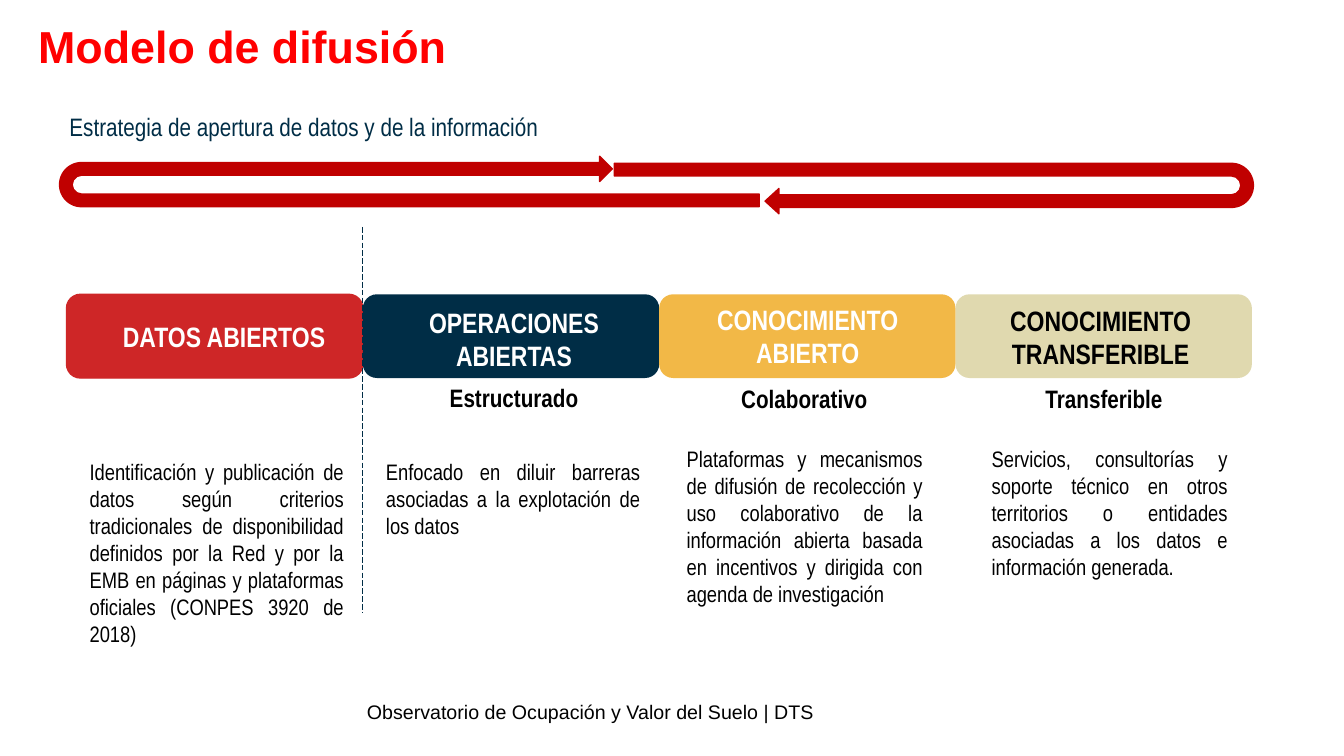
import pptx
import pptx.dml.color
import pptx.enum.dml
import pptx.enum.shapes
import pptx.enum.text
import pptx.oxml
import pptx.oxml.ns
import pptx.util

RGBColor = pptx.dml.color.RGBColor
SHAPE = pptx.enum.shapes.MSO_SHAPE
ALIGN = pptx.enum.text.PP_ALIGN

BRIGHT_RED = RGBColor(0xFF, 0x00, 0x00)
ARROW_RED = RGBColor(0xC0, 0x00, 0x00)
CARD_RED = RGBColor(0xCE, 0x26, 0x27)
NAVY = RGBColor(0x00, 0x2D, 0x46)
AMBER = RGBColor(0xF2, 0xB8, 0x47)
SAND = RGBColor(0xE0, 0xD9, 0xAF)
WHITE = RGBColor(0xFF, 0xFF, 0xFF)
BLACK = RGBColor(0x00, 0x00, 0x00)

CARD_LEFT, CARD_WIDTH = 4.95, 22.05
CARD_TOP, CARD_HEIGHT = 38.93, 11.07

STAGES = [
    {
        "fill": CARD_RED, "ink": WHITE, "border": CARD_RED,
        "heading": ("DATOS ABIERTOS", 8.4, 41.6, 5.9, ALIGN.LEFT),
        "level": None,
        "body": ("Identificación y publicación de datos según criterios tradicionales "
                 "de disponibilidad definidos por la Red y por la EMB en páginas y "
                 "plataformas oficiales (CONPES 3920 de 2018)", 5.93, 60, 20.4, 26.5),
    },
    {
        "fill": NAVY, "ink": WHITE, "border": None,
        "heading": ("OPERACIONES ABIERTAS", 29.25, 39.73, 10.3, ALIGN.CENTER),
        "level": ("Estructurado", 29.25, 49.87),
        "body": ("Enfocado en diluir barreras asociadas a la explotación de los datos",
                 27.98, 60, 20.4, 12.1),
    },
    {
        "fill": AMBER, "ink": WHITE, "border": None,
        "heading": ("CONOCIMIENTO ABIERTO", 51.1, 39.33, 10.3, ALIGN.CENTER),
        "level": ("Colaborativo", 50.85, 50),
        "body": ("Plataformas y mecanismos de difusión de recolección y uso "
                 "colaborativo de la información abierta basada en incentivos y "
                 "dirigida con agenda de investigación", 50.35, 58.27, 19.05, 22.9),
    },
    {
        "fill": SAND, "ink": BLACK, "border": None,
        "heading": ("CONOCIMIENTO TRANSFERIBLE", 72.9, 39.47, 10.3, ALIGN.CENTER),
        "level": ("Transferible", 73.15, 50),
        "body": ("Servicios, consultorías y soporte técnico en otros territorios o "
                 "entidades asociadas a los datos e información generada.",
                 73.05, 58.27, 19.05, 19.3),
    },
]


class SlideBuilder:
    """Draws styled elements on one slide, placed in percent of its width and height."""

    narrow = "Arial Narrow"
    wide = "Arial"

    def __init__(self, deck):
        self.deck = deck
        self.page = deck.slides.add_slide(deck.slide_layouts[6])

    def place(self, left, top, width, height):
        across, down = self.deck.slide_width / 100, self.deck.slide_height / 100
        return [round(length) for length in
                (left * across, top * down, width * across, height * down)]

    def text(self, words, area, size, color=BLACK, bold=False, font=None,
             align=ALIGN.LEFT, spacing=None):
        box = self.page.shapes.add_textbox(*self.place(*area))
        box.text_frame.word_wrap = True
        para = box.text_frame.paragraphs[0]
        para.alignment = align
        if spacing:
            para.line_spacing = spacing
        span = para.add_run()
        span.text = words
        span.font.name = font or self.narrow
        span.font.size = pptx.util.Pt(size)
        span.font.bold = bold
        span.font.color.rgb = color

    def paint(self, shape, fill, border=None):
        shape.shadow.inherit = False
        shape.fill.solid()
        shape.fill.fore_color.rgb = fill
        if border is None:
            shape.line.fill.background()
        else:
            shape.line.color.rgb = border
            shape.line.width = pptx.util.Pt(1)

    def card(self, area, fill, border):
        shape = self.page.shapes.add_shape(SHAPE.ROUNDED_RECTANGLE, *self.place(*area))
        self.paint(shape, fill, border)

    def turn_arrow(self, area, rotation, adjustments):
        left, top, width, height = self.place(*area)
        shift = (width - height) // 2
        shape = self.page.shapes.add_shape(
            SHAPE.U_TURN_ARROW, left + shift, top - shift, height, width)
        shape.rotation = rotation
        for index, value in enumerate(adjustments):
            shape.adjustments[index] = value
        self.paint(shape, ARROW_RED, ARROW_RED)

    def divider(self, column, top, bottom):
        x, start, _, end = self.place(column, top, 0, bottom)
        line = self.page.shapes.add_connector(
            pptx.enum.shapes.MSO_CONNECTOR.STRAIGHT, x, start, x, end)
        line.line.color.rgb = NAVY
        line.line.width = pptx.util.Pt(0.5)
        line.line.dash_style = pptx.enum.dml.MSO_LINE.LONG_DASH
        effects = pptx.oxml.parse_xml(
            "<a:effectLst %s/>" % pptx.oxml.ns.nsdecls("a"))
        line._element.spPr.append(effects)

    def stage(self, index, stage):
        left = CARD_LEFT + index * CARD_WIDTH
        self.card((left, CARD_TOP, CARD_WIDTH, CARD_HEIGHT), stage["fill"], stage["border"])
        words, x, y, height, align = stage["heading"]
        self.text(words, (x, y, 18, height), 20, stage["ink"], True, align=align)
        if stage["level"]:
            words, x, y = stage["level"]
            self.text(words, (x, y, 18, 5.33), 18, bold=True, align=ALIGN.CENTER)
        words, *area = stage["body"]
        self.text(words, area, 16, align=ALIGN.JUSTIFY)


def main():
    deck = pptx.Presentation()
    deck.slide_width = pptx.util.Inches(13.33)
    deck.slide_height = pptx.util.Inches(7.5)
    builder = SlideBuilder(deck)

    builder.text("Modelo de difusión", (2.1, 2.6, 36, 7.8), 32, BRIGHT_RED, True,
                 builder.wide, spacing=0.9)
    builder.text("Estrategia de apertura de datos y de la información",
                 (4.43, 14.5, 40, 4.8), 18, NAVY, spacing=0.9)
    for index, stage in enumerate(STAGES):
        builder.stage(index, stage)
    builder.divider(CARD_LEFT + CARD_WIDTH, 30, 81.07)
    builder.turn_arrow((45.7, 21.6, 47.56, 6.67), 90, (0.25, 0.25, 0.275, 0.438, 0.764))
    builder.turn_arrow((4.43, 20.67, 52.06, 6.67), 270, (0.25, 0.25, 0.25, 0.438, 0.79))
    builder.text("Observatorio de Ocupación y Valor del Suelo | DTS",
                 (26.56, 91.87, 46.96, 4.53), 14, font=builder.wide)

    deck.save("out.pptx")


if __name__ == "__main__":
    main()
